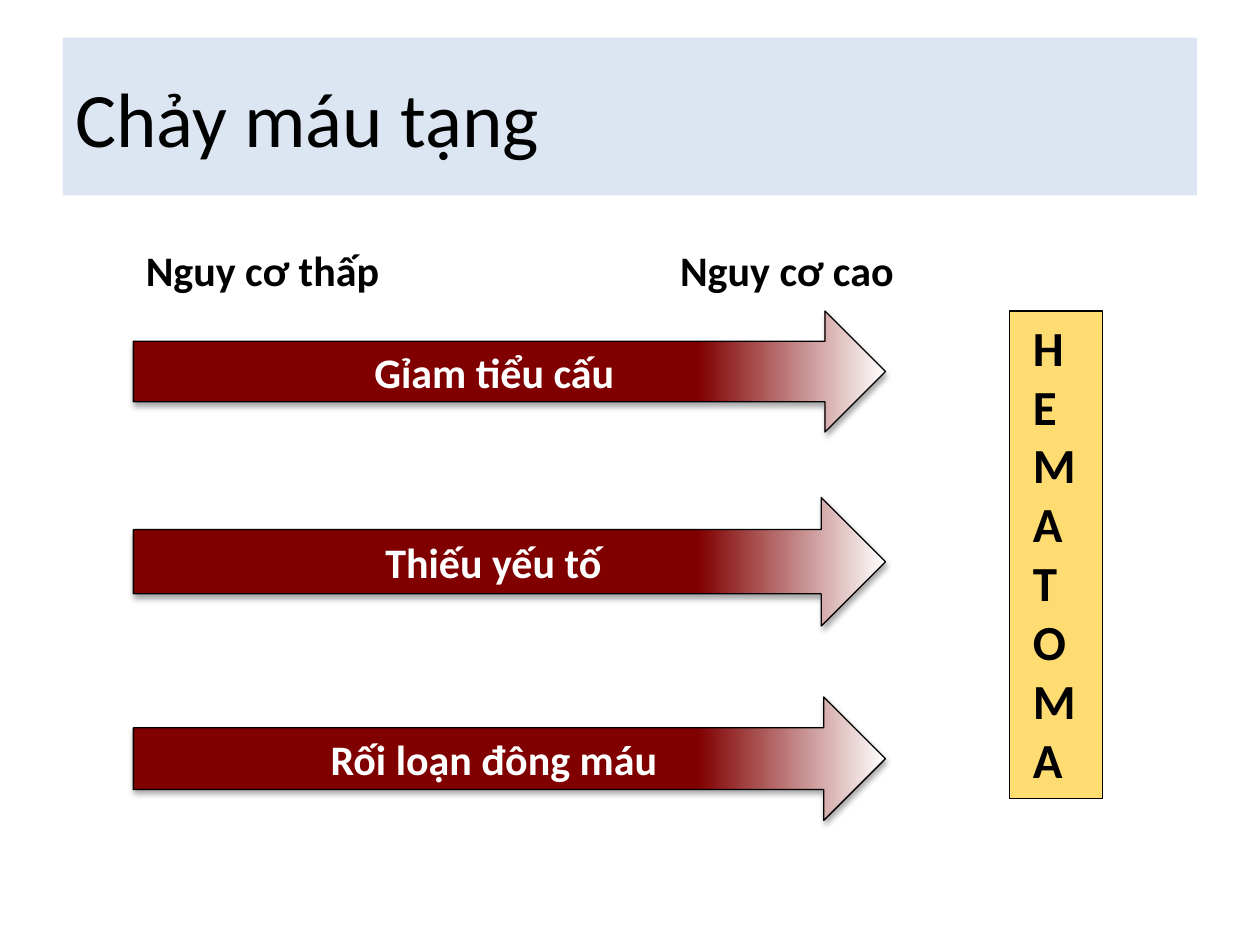
from dataclasses import dataclass

from lxml.etree import SubElement
from pptx import Presentation
from pptx.dml.color import RGBColor
from pptx.enum.shapes import MSO_SHAPE as Shape
from pptx.enum.text import MSO_ANCHOR as Anchor, PP_ALIGN as Align
from pptx.oxml.ns import qn
from pptx.util import Cm, Pt

TITLE = "Chảy máu tạng"
OUTCOME = "HEMATOMA"
# label, left, width
RISK_LEVELS = [("Nguy cơ thấp", 2.69, 5.26), ("Nguy cơ cao", 13.46, 4.85)]
# label, top, height
CAUSES = [
    ("Gỉam tiểu cấu", 6.27, 2.44),
    ("Thiếu yếu tố", 10.03, 2.59),
    ("Rối loạn đông máu", 14.05, 2.49),
]
ARROW_LEFT, ARROW_WIDTH = 2.69, 15.16
RISK_TOP, RISK_HEIGHT = 4.8, 1.27


@dataclass(frozen=True)
class Theme:
    font: str = "Calibri"
    title_size: int = 44
    outcome_size: int = 28
    label_size: int = 24
    ink: str = "000000"
    light: str = "FFFFFF"
    banner: str = "DCE6F2"
    outcome: str = "FFDC72"
    arrow: str = "800000"
    line_width: float = 0.75


THEME = Theme()


def rgb(value):
    return RGBColor.from_string(value)


def write(frame, lines, size, color=THEME.ink, bold=True, align=Align.LEFT):
    for index, line in enumerate(lines):
        paragraph = frame.add_paragraph() if index else frame.paragraphs[0]
        paragraph.text = line
        paragraph.alignment = align
        font = paragraph.font
        font.name, font.size, font.bold = THEME.font, Pt(size), bold
        font.color.rgb = rgb(color)


def add_block(slide, preset, box, fill=None, outlined=True, anchor=Anchor.MIDDLE):
    block = slide.shapes.add_shape(preset, *map(Cm, box))
    block.shadow.inherit = False
    if fill:
        block.fill.solid()
        block.fill.fore_color.rgb = rgb(fill)
    if outlined:
        block.line.color.rgb = rgb(THEME.ink)
        block.line.width = Pt(THEME.line_width)
    else:
        block.line.fill.background()
    block.text_frame.word_wrap = True
    block.text_frame.vertical_anchor = anchor
    return block


def fade_to_tip(arrow):
    """Keep the shaft solid and fade the last quarter to the light colour."""
    arrow.fill.gradient()
    arrow.fill.gradient_angle = 0
    stops = [(0.75, THEME.arrow), (1, THEME.light)]
    for stop, (position, color) in zip(arrow.fill.gradient_stops, stops):
        stop.position = position
        stop.color.rgb = rgb(color)


def drop_shadow(block):
    effects = block._element.spPr.find(qn("a:effectLst"))
    shadow = SubElement(effects, qn("a:outerShdw"), blurRad=str(Pt(3.1)),
                        dist=str(Pt(1.8)), dir="5400000", rotWithShape="0")
    color = SubElement(shadow, qn("a:srgbClr"), val=THEME.ink)
    SubElement(color, qn("a:alpha"), val="35000")


def main():
    deck = Presentation()
    deck.slide_width, deck.slide_height = Cm(25.4), Cm(19.05)
    slide = deck.slides.add_slide(deck.slide_layouts[6])

    banner = add_block(slide, Shape.RECTANGLE, (1.27, 0.76, 22.86, 3.18),
                       THEME.banner, outlined=False)
    write(banner.text_frame, [TITLE], THEME.title_size, bold=False)

    outcome = add_block(slide, Shape.RECTANGLE, (20.35, 6.27, 1.88, 9.83),
                        THEME.outcome, anchor=Anchor.TOP)
    outcome.text_frame.margin_left = Cm(0.47)
    outcome.text_frame.margin_right = 0
    write(outcome.text_frame, OUTCOME, THEME.outcome_size)

    for cause, top, height in CAUSES:
        arrow = add_block(slide, Shape.RIGHT_ARROW,
                          (ARROW_LEFT, top, ARROW_WIDTH, height))
        fade_to_tip(arrow)
        drop_shadow(arrow)
        write(arrow.text_frame, [cause], THEME.label_size, THEME.light,
              align=Align.CENTER)

    for level, left, width in RISK_LEVELS:
        label = slide.shapes.add_textbox(
            *map(Cm, (left, RISK_TOP, width, RISK_HEIGHT)))
        label.text_frame.word_wrap = False
        write(label.text_frame, [level], THEME.label_size)

    deck.save("out.pptx")


if __name__ == "__main__":
    main()
